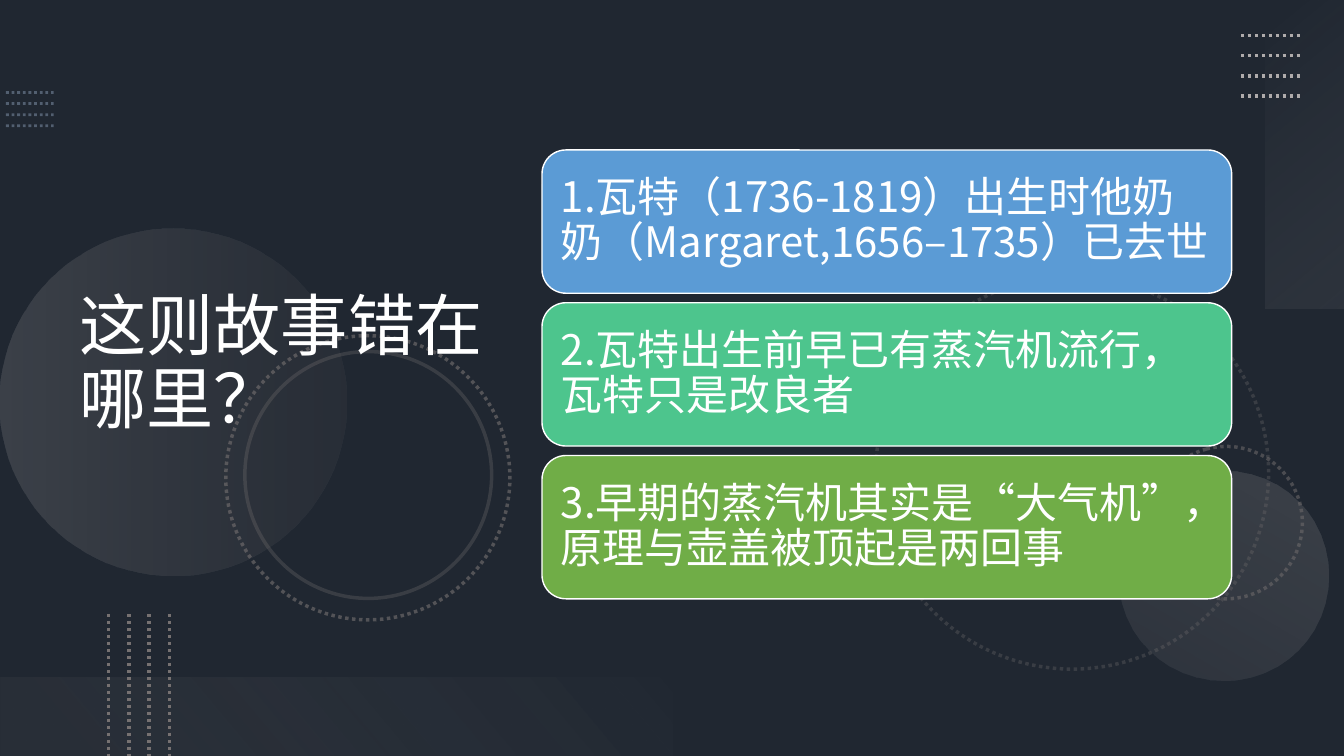
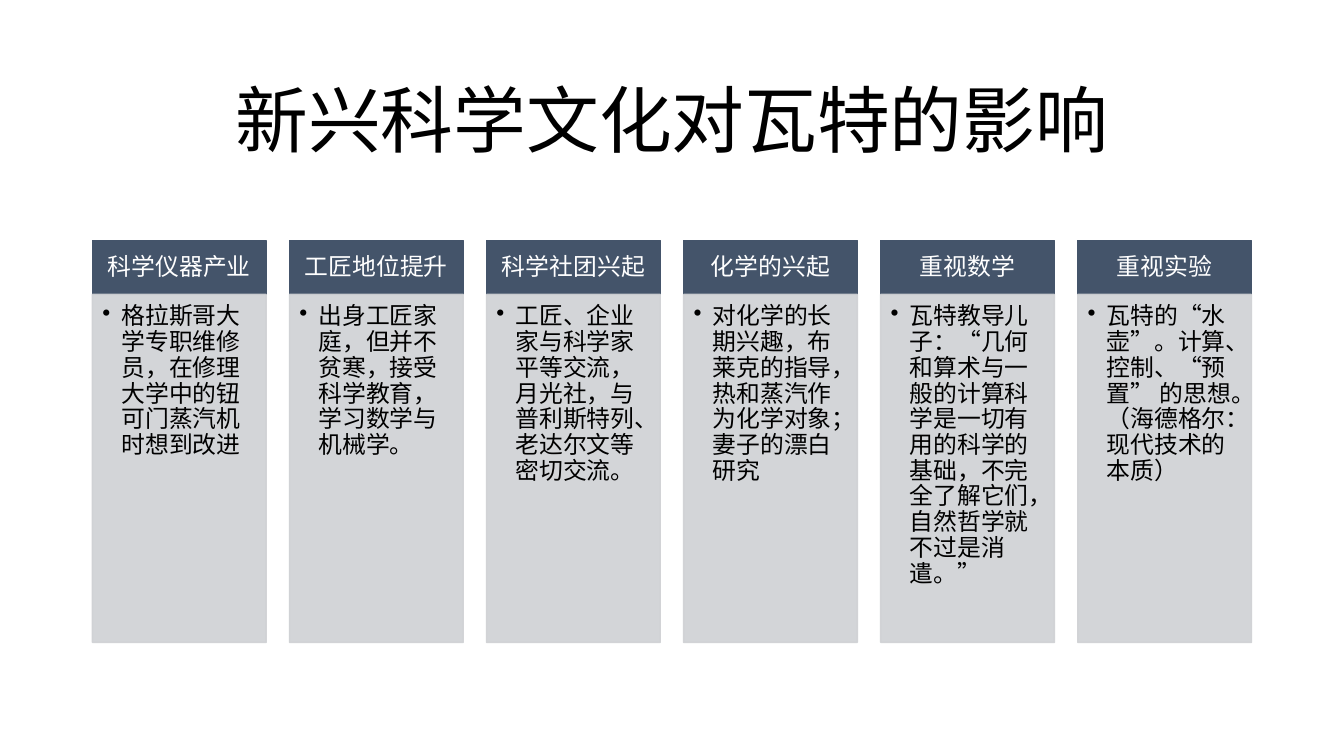
from dataclasses import dataclass
from typing import NamedTuple, Optional

from lxml.etree import SubElement
from pptx import Presentation
from pptx.dml.color import RGBColor as RGB
from pptx.enum.dml import MSO_LINE
from pptx.enum.shapes import MSO_CONNECTOR as CONN, MSO_SHAPE as SHAPE
from pptx.enum.text import MSO_ANCHOR as ANCHOR, MSO_AUTO_SIZE as AUTO, PP_ALIGN as ALIGN
from pptx.oxml.ns import qn
from pptx.util import Cm, Pt


@dataclass(frozen=True)
class Theme:
    font: str = "Noto Sans CJK SC"
    slate: str = "44546A"
    white: str = "FFFFFF"
    black: str = "000000"
    gray: str = "767171"
    silver: str = "AFABAB"
    steel: str = "8497B0"
    panel: str = "CFD1D4"
    cards: tuple[str, ...] = ("5B9BD5", "4DC58D", "70AD47")
    side_title: int = 48
    top_title: int = 52
    card: int = 30
    column: int = 17


T = Theme()
SLIDE_W, SLIDE_H = 33.87, 19.05


class Box(NamedTuple):
    """Left, top, width and height in centimetres."""
    x: float
    y: float
    w: float
    h: float

    def emu(self) -> list[int]:
        return [Cm(v) for v in self]


class Stop(NamedTuple):
    color: str
    alpha: int
    pos: float


@dataclass(frozen=True)
class Ring:
    box: Box
    alpha: int
    dotted: bool = True


@dataclass(frozen=True)
class Glow:
    kind: SHAPE
    box: Box
    rotation: int
    angle: int  # clockwise
    stops: tuple[Stop, Stop]


@dataclass(frozen=True)
class DotGrid:
    x: float
    y: float
    length: float
    gap: float
    color: str
    width: float = 2.5
    alpha: Optional[int] = None
    vertical: bool = False
    count: int = 4


class Column(NamedTuple):
    head: str
    body: str


# Backdrop of the dark slide
RINGS = (
    Ring(Box(22.07, 6.96, 9.9, 9.9), 30),
    Ring(Box(28.98, 11.25, 3.84, 3.84), 50),
    Ring(Box(5.69, 8.46, 7.16, 7.16), 60),
    Ring(Box(6.17, 8.86, 6.22, 6.22), 30, dotted=False),
)
DISCS = (
    Glow(SHAPE.OVAL, Box(0, 5.77, 8.74, 8.74), 270, 90,
         (Stop(T.silver, 20, 0), Stop(T.gray, 10, 1))),
    Glow(SHAPE.OVAL, Box(28.19, 11.86, 5.28, 5.28), 210, 90,
         (Stop(T.silver, 10, 0), Stop(T.silver, 20, 1))),
)
BANDS = (
    Glow(SHAPE.RECTANGLE, Box(29.01, 2.9, 7.77, 1.98), 270, 140,
         (Stop("F5F5F5", 0, 0), Stop(T.silver, 10, 1))),
    Glow(SHAPE.RECTANGLE, Box(0, 17.07, 16.94, 1.98), 180, 140,
         (Stop(T.gray, 10, 0.1), Stop("F1F0F0", 0, 1))),
)
GRIDS = (
    DotGrid(0.15, 2.33, 1.2, 0.28, T.steel, width=2, alpha=50),
    DotGrid(31.27, 0.89, 1.52, 0.51, T.silver),
    DotGrid(2.74, 15.47, 3.58, 0.51, T.gray, vertical=True),
)

ERRORS = (
    "1.瓦特（1736-1819）出生时他奶奶（Margaret,1656–1735）已去世",
    "2.瓦特出生前早已有蒸汽机流行，瓦特只是改良者",
    "3.早期的蒸汽机其实是“大气机”，原理与壶盖被顶起是两回事",
)
COLUMNS = (
    Column("科学仪器产业", "格拉斯哥大学专职维修员，在修理大学中的钮可门蒸汽机时想到改进"),
    Column("工匠地位提升", "出身工匠家庭，但并不贫寒，接受科学教育，学习数学与机械学。"),
    Column("科学社团兴起", "工匠、企业家与科学家平等交流，月光社，与普利斯特列、老达尔文等密切交流。"),
    Column("化学的兴起", "对化学的长期兴趣，布莱克的指导，热和蒸汽作为化学对象；妻子的漂白研究"),
    Column("重视数学", "瓦特教导儿子：“几何和算术与一般的计算科学是一切有用的科学的基础，"
                   "不完全了解它们，自然哲学就不过是消遣。”"),
    Column("重视实验", "瓦特的“水壶”。计算、控制、“预置” 的思想。（海德格尔：现代技术的本质）"),
)


# Drawing helpers
def set_alpha(el, *percents: int) -> None:
    """Give the colours below el their opacities, in order."""
    for clr, pct in zip(list(el.iter(qn("a:srgbClr"))), percents):
        SubElement(clr, qn("a:alpha"), val=str(pct * 1000))


def set_line(line, color: str, width: float, dotted: bool = False) -> None:
    line.color.rgb = RGB.from_string(color)
    line.width = Pt(width)
    if dotted:
        line.dash_style = MSO_LINE.ROUND_DOT


def add_shape(s, kind: SHAPE, box: Box, fill: Optional[str] = None,
              line: Optional[str] = None, width: float = 1):
    sp = s.shapes.add_shape(kind, *box.emu())
    sp.shadow.inherit = False
    if fill:
        sp.fill.solid()
        sp.fill.fore_color.rgb = RGB.from_string(fill)
    else:
        sp.fill.background()
    if line:
        set_line(sp.line, line, width)
    else:
        sp.line.fill.background()
    return sp


def put_text(sp, text: str, *, size: int, color: str, align: ALIGN = ALIGN.LEFT,
             anchor: ANCHOR = ANCHOR.MIDDLE, bullet: bool = False,
             insets: tuple[float, float, float, float] = (0.25, 0.13, 0.25, 0.13)) -> None:
    tf = sp.text_frame
    tf.word_wrap, tf.auto_size, tf.vertical_anchor = True, AUTO.NONE, anchor
    tf.margin_left, tf.margin_top, tf.margin_right, tf.margin_bottom = map(Cm, insets)
    p = tf.paragraphs[0]
    p.alignment, p.line_spacing = align, 0.9
    if bullet:
        pPr = p._p.get_or_add_pPr()
        pPr.set("marL", str(Cm(0.48)))
        pPr.set("indent", str(-Cm(0.48)))
        SubElement(pPr, qn("a:buChar"), char="•")
    r = p.add_run()
    r.text = text
    r.font.size, r.font.name = Pt(size), T.font
    r.font.color.rgb = RGB.from_string(color)
    SubElement(r._r.get_or_add_rPr(), qn("a:ea"), typeface=T.font)


def put_title(s, text: str, box: Box, **fmt) -> None:
    sp = s.shapes.title
    sp.left, sp.top, sp.width, sp.height = box.emu()
    put_text(sp, text, **fmt)
    s.shapes.element.append(sp.element)  # bring above the backdrop


def new_slide(prs, background: str):
    s = prs.slides.add_slide(prs.slide_layouts[5])
    s.background.fill.solid()
    s.background.fill.fore_color.rgb = RGB.from_string(background)
    return s


def draw_ring(s, ring: Ring) -> None:
    sp = add_shape(s, SHAPE.OVAL, ring.box)
    set_line(sp.line, T.gray, 2.5, ring.dotted)
    sp.rotation = 75
    set_alpha(sp.element.spPr, ring.alpha)


def draw_glow(s, glow: Glow) -> None:
    sp = add_shape(s, glow.kind, glow.box)
    sp.rotation = glow.rotation
    sp.fill.gradient()
    sp.fill.gradient_angle = 360 - glow.angle
    for gs, stop in zip(sp.fill.gradient_stops, glow.stops):
        gs.color.rgb = RGB.from_string(stop.color)
        gs.position = stop.pos
    set_alpha(sp.element.spPr, *(stop.alpha for stop in glow.stops))


def draw_grid(s, grid: DotGrid) -> None:
    for i in range(grid.count):
        step = i * grid.gap
        x, y = (grid.x + step, grid.y) if grid.vertical else (grid.x, grid.y + step)
        dx, dy = (0, grid.length) if grid.vertical else (grid.length, 0)
        ln = s.shapes.add_connector(CONN.STRAIGHT, Cm(x), Cm(y), Cm(x + dx), Cm(y + dy))
        set_line(ln.line, grid.color, grid.width, dotted=True)
        spPr = ln.element.spPr
        SubElement(spPr, qn("a:effectLst"))
        if grid.alpha is not None:
            set_alpha(spPr, grid.alpha)


# Slides
def errors_slide(prs) -> None:
    s = new_slide(prs, T.slate)
    shade = add_shape(s, SHAPE.RECTANGLE, Box(0, 0, SLIDE_W, SLIDE_H), T.black)
    set_alpha(shade.element.spPr, 53)
    for glow in DISCS + BANDS:
        draw_glow(s, glow)
    for ring in RINGS:
        draw_ring(s, ring)
    for grid in GRIDS:
        draw_grid(s, grid)
    put_title(s, "这则故事错在哪里？", Box(1.75, 1.37, 11.66, 15.67),
              size=T.side_title, color=T.white)
    for i, (text, color) in enumerate(zip(ERRORS, T.cards)):
        card = add_shape(s, SHAPE.ROUNDED_RECTANGLE,
                         Box(13.66, 3.78 + i * 3.85, 17.38, 3.61), color, T.white)
        put_text(card, text, size=T.card, color=T.white, insets=(0.3,) * 4)


def influence_slide(prs) -> None:
    s = new_slide(prs, T.white)
    left, width, col_w = 2.33, 29.21, 4.38
    put_title(s, "新兴科学文化对瓦特的影响", Box(left, 1.55, width, 3.15),
              size=T.top_title, color=T.black, align=ALIGN.CENTER)
    pitch = (width - col_w) / (len(COLUMNS) - 1)
    for i, col in enumerate(COLUMNS):
        x = left + i * pitch
        head = add_shape(s, SHAPE.RECTANGLE, Box(x, 6.06, col_w, 1.36), T.slate, T.slate)
        put_text(head, col.head, size=T.column, color=T.white, align=ALIGN.CENTER,
                 insets=(0.33, 0.2, 0.33, 0.2))
        body = add_shape(s, SHAPE.RECTANGLE, Box(x, 7.42, col_w, 8.77), T.panel, T.panel)
        set_alpha(body.element.spPr, 90, 90)
        put_text(body, col.body, size=T.column, color=T.black, anchor=ANCHOR.TOP,
                 bullet=True, insets=(0.25, 0.25, 0.33, 0.38))


def main() -> None:
    prs = Presentation()
    prs.slide_width, prs.slide_height = Cm(SLIDE_W), Cm(SLIDE_H)
    errors_slide(prs)
    influence_slide(prs)
    prs.save("out.pptx")


if __name__ == "__main__":
    main()
